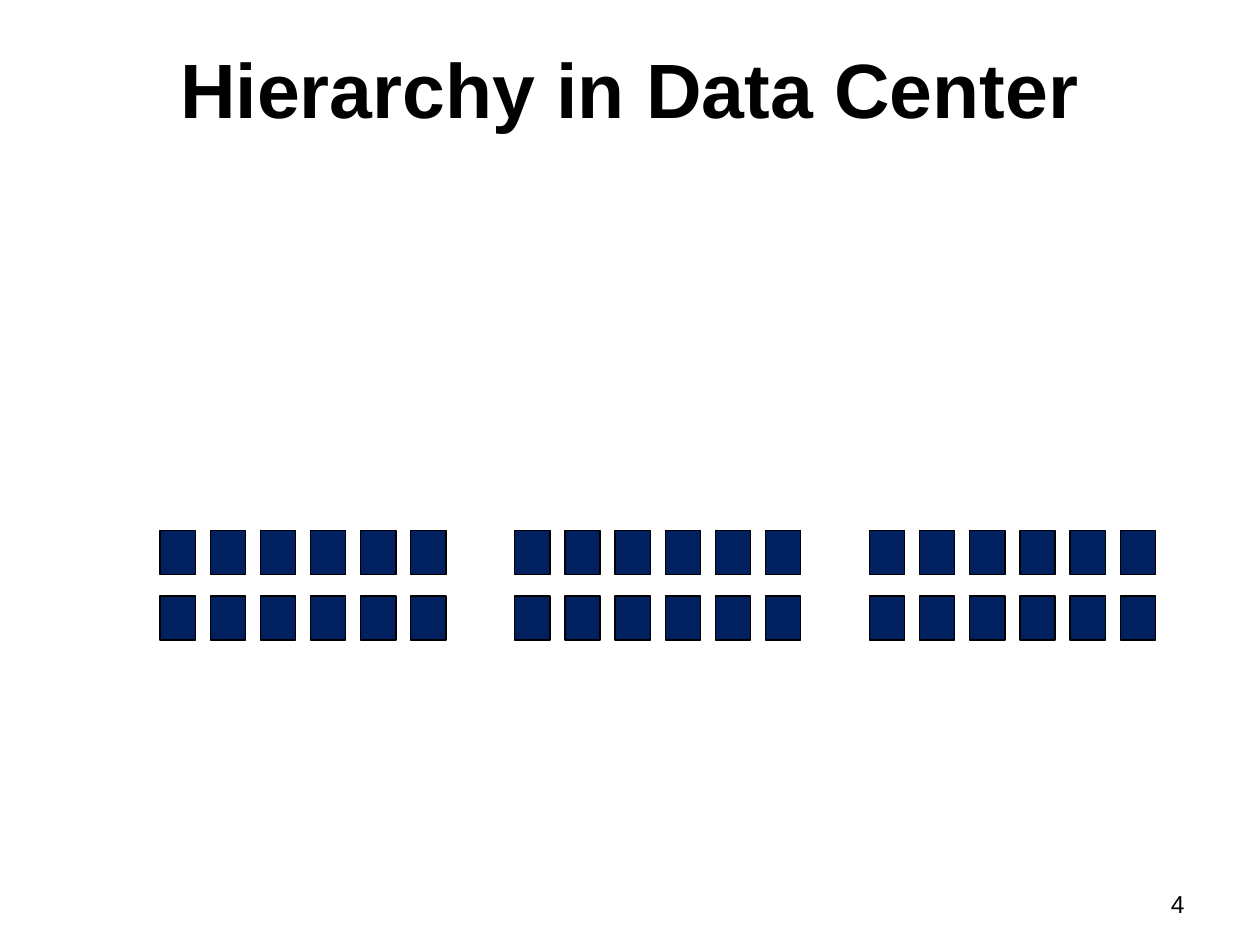
from dataclasses import dataclass
from itertools import product

from pptx import Presentation
from pptx.dml.color import RGBColor
from pptx.enum.shapes import MSO_SHAPE
from pptx.enum.text import MSO_ANCHOR, PP_ALIGN
from pptx.util import Inches, Pt


@dataclass(frozen=True)
class Theme:
    font: str = "Arial"
    text: RGBColor = RGBColor(0x00, 0x00, 0x00)
    background: RGBColor = RGBColor(0xFF, 0xFF, 0xFF)
    server: RGBColor = RGBColor(0x00, 0x20, 0x60)
    outline: RGBColor = RGBColor(0x00, 0x00, 0x00)
    title_size: float = 44
    number_size: float = 14
    outline_width: float = 0.75


GRID_COLUMNS = GRID_ROWS = 100
RACKS = 3
SERVER_COLUMNS, SERVER_ROWS = 6, 2
RACK_LEFT, RACK_TOP, RACK_PITCH = 12.7, 56.13, 28.15
SERVER_WIDTH, SERVER_HEIGHT = 2.8, 4.67
SERVER_COLUMN_PITCH, SERVER_ROW_PITCH = 3.98, 6.93


def write_text(shape, text, *, font, size, color, align, bold=False):
    frame = shape.text_frame
    frame.word_wrap = True
    frame.vertical_anchor = MSO_ANCHOR.MIDDLE
    paragraph = frame.paragraphs[0]
    paragraph.text = text
    paragraph.alignment = align
    paragraph.font.name = font
    paragraph.font.size = Pt(size)
    paragraph.font.bold = bold
    paragraph.font.color.rgb = color


class SlideBuilder:
    def __init__(self, presentation, theme):
        self.theme = theme
        self.column = presentation.slide_width / GRID_COLUMNS
        self.row = presentation.slide_height / GRID_ROWS
        self.slide = presentation.slides.add_slide(presentation.slide_layouts[5])
        fill = self.slide.background.fill
        fill.solid()
        fill.fore_color.rgb = theme.background

    def box(self, left, top, width, height):
        return (round(left * self.column), round(top * self.row),
                round(width * self.column), round(height * self.row))

    def title(self, text, *area):
        shape = self.slide.shapes.title
        shape.left, shape.top, shape.width, shape.height = self.box(*area)
        write_text(shape, text, font=self.theme.font, size=self.theme.title_size,
                   color=self.theme.text, align=PP_ALIGN.CENTER, bold=True)

    def page_number(self, text, *area):
        shape = self.slide.shapes.add_textbox(*self.box(*area))
        write_text(shape, text, font=self.theme.font, size=self.theme.number_size,
                   color=self.theme.text, align=PP_ALIGN.RIGHT)

    def server(self, rack, left, top):
        shape = rack.shapes.add_shape(
            MSO_SHAPE.FLOWCHART_PROCESS,
            *self.box(left, top, SERVER_WIDTH, SERVER_HEIGHT))
        shape.shadow.inherit = False
        shape.fill.solid()
        shape.fill.fore_color.rgb = self.theme.server
        shape.line.color.rgb = self.theme.outline
        shape.line.width = Pt(self.theme.outline_width)

    def rack(self, left, top):
        group = self.slide.shapes.add_group_shape()
        for column, row in product(range(SERVER_COLUMNS), range(SERVER_ROWS)):
            self.server(group, left + column * SERVER_COLUMN_PITCH,
                        top + row * SERVER_ROW_PITCH)


def main():
    presentation = Presentation()
    presentation.slide_width = Inches(10)
    presentation.slide_height = Inches(7.5)
    builder = SlideBuilder(presentation, Theme())
    builder.title("Hierarchy in Data Center", 5, 4, 90, 10.53)
    builder.page_number("4", 71.7, 93.33, 23.3, 4.67)
    for index in range(RACKS):
        builder.rack(RACK_LEFT + index * RACK_PITCH, RACK_TOP)
    presentation.save("out.pptx")


if __name__ == "__main__":
    main()
